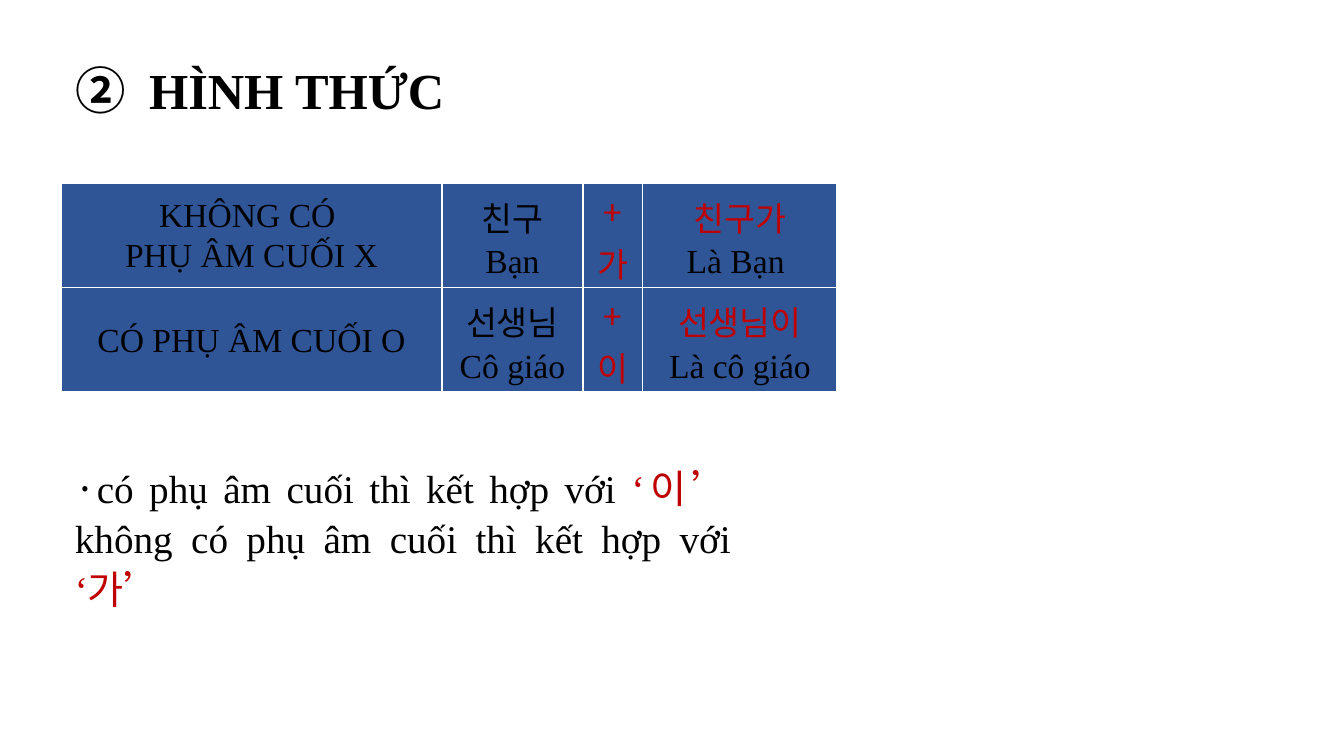
from dataclasses import dataclass

import lxml.etree
import pptx
import pptx.dml.color
import pptx.enum.text
import pptx.oxml.ns
import pptx.util

EMU_PER_PX = 914400 / 100.8
LATIN = "Times New Roman"
KOREAN = "Noto Sans CJK KR"
BLACK = pptx.dml.color.RGBColor(0x00, 0x00, 0x00)
WHITE = pptx.dml.color.RGBColor(0xFF, 0xFF, 0xFF)
RED = pptx.dml.color.RGBColor(0xC0, 0x00, 0x00)
BLUE = pptx.dml.color.RGBColor(0x2F, 0x55, 0x97)
ALIGN = pptx.enum.text.PP_ALIGN
ANCHOR = pptx.enum.text.MSO_ANCHOR
AUTO_SIZE = pptx.enum.text.MSO_AUTO_SIZE


@dataclass(frozen=True)
class Piece:
    text: str
    typeface: str = LATIN
    color: pptx.dml.color.RGBColor = BLACK


COLUMN_WIDTHS = (381, 141, 60, 194)
ROW_HEIGHTS = (104, 103)
FORMS = (
    (
        (Piece("KHÔNG CÓ "), Piece("PHỤ ÂM CUỐI X")),
        (Piece("친구", KOREAN), Piece("Bạn")),
        (Piece("+가", KOREAN, RED),),
        (Piece("친구가", KOREAN, RED), Piece("Là Bạn ")),
    ),
    (
        (Piece("CÓ PHỤ ÂM CUỐI O"),),
        (Piece("선생님", KOREAN), Piece("Cô giáo")),
        (Piece("+이", KOREAN, RED),),
        (Piece("선생님이", KOREAN, RED), Piece("Là cô giáo")),
    ),
)
RULE = (
    Piece("·", KOREAN),
    Piece("có phụ âm cuối thì kết hợp với "),
    Piece("‘이’ ", LATIN, RED),
    Piece("không có phụ âm cuối thì kết hợp với "),
    Piece("‘가’", LATIN, RED),
)


def px(length: int) -> int:
    return pptx.util.Emu(round(length * EMU_PER_PX))


def add_child(parent, tag: str, **attributes: str):
    return lxml.etree.SubElement(parent, pptx.oxml.ns.qn(tag), attributes)


def set_typeface(font, typeface: str) -> None:
    """Set the Latin typeface, with Hangul always in the Korean one."""
    font.name = typeface
    add_child(font._element, "a:ea", typeface=KOREAN)


def add_runs(paragraph, pieces: tuple[Piece, ...]) -> None:
    for piece in pieces:
        run = paragraph.add_run()
        run.text = piece.text
        set_typeface(run.font, piece.typeface)
        run.font.color.rgb = piece.color


def add_title(slide) -> None:
    title = slide.shapes.title
    title.left, title.top, title.width, title.height = map(px, (65, 61, 1038, 122))
    frame = title.text_frame
    frame.vertical_anchor = ANCHOR.TOP
    frame.auto_size = AUTO_SIZE.NONE
    paragraph = frame.paragraphs[0]
    tabs = add_child(paragraph._p.get_or_add_pPr(), "a:tabLst")
    add_child(tabs, "a:tab", pos=str(px(74)), algn="l")
    paragraph.alignment = ALIGN.LEFT
    paragraph.line_spacing = 0.9
    paragraph.font.size = pptx.util.Pt(36)
    paragraph.font.bold = True
    add_runs(paragraph, (Piece("②\t", KOREAN), Piece("HÌNH THỨC")))


def add_borders(cell) -> None:
    properties = cell._tc.get_or_add_tcPr()
    for position, side in enumerate(("a:lnL", "a:lnR", "a:lnT", "a:lnB")):
        border = add_child(properties, side, w=str(pptx.util.Pt(1)))
        add_child(add_child(border, "a:solidFill"), "a:srgbClr", val=str(WHITE))
        properties.insert(position, border)


def fill_cell(cell, lines: tuple[Piece, ...]) -> None:
    cell.fill.solid()
    cell.fill.fore_color.rgb = BLUE
    add_borders(cell)
    cell.vertical_anchor = ANCHOR.MIDDLE
    cell.margin_left = cell.margin_right = px(7)
    cell.margin_top = cell.margin_bottom = 0
    frame = cell.text_frame
    for index, line in enumerate(lines):
        paragraph = frame.add_paragraph() if index else frame.paragraphs[0]
        paragraph.alignment = ALIGN.CENTER
        paragraph.line_spacing = 1.07
        paragraph.font.size = pptx.util.Pt(24)
        set_typeface(paragraph.font, line.typeface)
        paragraph.font.color.rgb = line.color
        paragraph.add_run().text = line.text


def add_forms_table(slide) -> None:
    forms = slide.shapes.add_table(
        len(ROW_HEIGHTS), len(COLUMN_WIDTHS),
        px(61), px(183), px(sum(COLUMN_WIDTHS)), px(sum(ROW_HEIGHTS)),
    ).table
    forms.first_row = forms.horz_banding = False
    for column, width in zip(forms.columns, COLUMN_WIDTHS):
        column.width = px(width)
    for row, height, contents in zip(forms.rows, ROW_HEIGHTS, FORMS):
        row.height = px(height)
        for cell, lines in zip(row.cells, contents):
            fill_cell(cell, lines)


def add_rule(slide) -> None:
    frame = slide.shapes.add_textbox(px(65), px(456), px(676), px(112)).text_frame
    frame.word_wrap = True
    frame.auto_size = AUTO_SIZE.SHAPE_TO_FIT_TEXT
    paragraph = frame.paragraphs[0]
    paragraph.alignment = ALIGN.JUSTIFY
    paragraph.line_spacing = 1.07
    paragraph.space_after = pptx.util.Pt(8)
    paragraph.font.size = pptx.util.Pt(28)
    add_runs(paragraph, RULE)


def main() -> None:
    presentation = pptx.Presentation()
    presentation.slide_width = px(1344)
    presentation.slide_height = px(756)
    title_only = presentation.slide_layouts.get_by_name("Title Only")
    slide = presentation.slides.add_slide(title_only)
    add_title(slide)
    add_forms_table(slide)
    add_rule(slide)
    presentation.save("out.pptx")


if __name__ == "__main__":
    main()
